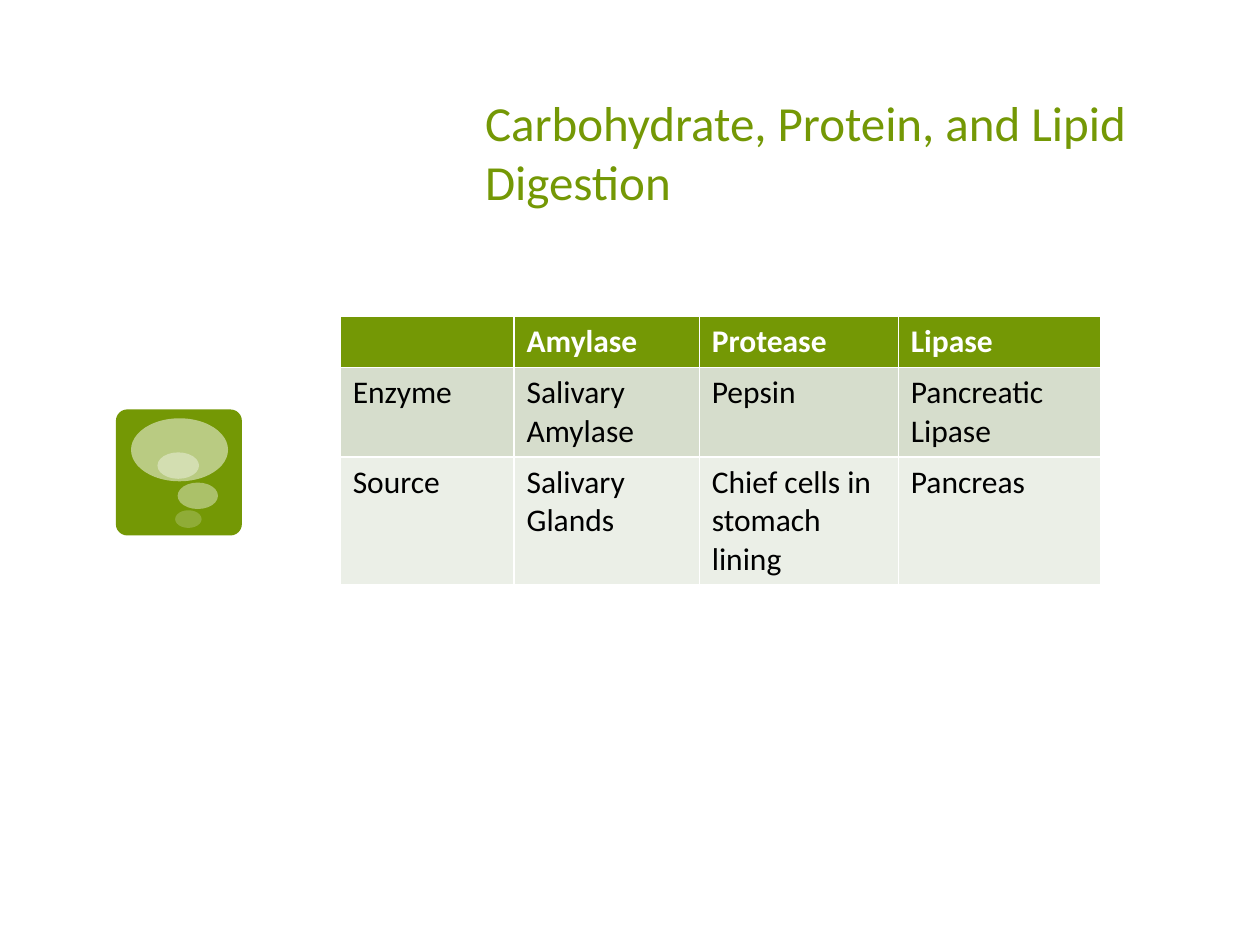
import pptx
import pptx.dml.color
import pptx.enum.shapes
import pptx.enum.text
import pptx.oxml.ns
import pptx.util
from lxml import etree

Inches = pptx.util.Inches
RGBColor = pptx.dml.color.RGBColor
MSO_SHAPE = pptx.enum.shapes.MSO_SHAPE

GREEN = RGBColor(0x74, 0x98, 0x05)
SAGE = RGBColor(0xD6, 0xDD, 0xCC)
PALE_SAGE = RGBColor(0xEB, 0xEF, 0xE7)
WHITE = RGBColor(0xFF, 0xFF, 0xFF)
BLACK = RGBColor(0, 0, 0)

BUBBLES = [
    ((1.04, 3.32, 0.77, 0.5), 50),
    ((1.41, 3.83, 0.32, 0.21), 40),
    ((1.39, 4.05, 0.21, 0.14), 20),
    ((1.25, 3.59, 0.33, 0.21), 38),
]
ENZYMES = [
    ["", "Amylase", "Protease", "Lipase"],
    ["Enzyme", "Salivary Amylase", "Pepsin", "Pancreatic Lipase"],
    ["Source", "Salivary Glands", "Chief cells in stomach lining", "Pancreas"],
]
COLUMN_WIDTHS = [1.38, 1.47, 1.58, 1.61]
ROW_HEIGHTS = [0.3, 0.41, 0.41]
ROW_STYLES = [(GREEN, WHITE, True), (SAGE, BLACK, False), (PALE_SAGE, BLACK, False)]


class EnzymeSlide:
    """Holds the slide and its text style, and adds each kind of element."""

    def __init__(self, slide):
        self.slide = slide
        self.font_name = "Calibri"

    def format_text(self, frame, size, color, bold=False):
        values = {"name": self.font_name, "size": pptx.util.Pt(size), "bold": bold}
        for paragraph in frame.paragraphs:
            for attribute, value in values.items():
                setattr(paragraph.font, attribute, value)
            paragraph.font.color.rgb = color

    def title(self, text, box):
        heading = self.slide.shapes.title
        for attribute, value in zip(("left", "top", "width", "height"), box):
            setattr(heading, attribute, Inches(value))
        frame = heading.text_frame
        frame.text = text
        frame_format = {
            "vertical_anchor": pptx.enum.text.MSO_ANCHOR.BOTTOM,
            "auto_size": pptx.enum.text.MSO_AUTO_SIZE.NONE,
            "word_wrap": True,
        }
        for attribute, value in frame_format.items():
            setattr(frame, attribute, value)
        frame.paragraphs[0].alignment = pptx.enum.text.PP_ALIGN.LEFT
        self.format_text(frame, 28, GREEN)

    def shape(self, group, preset, box, color, opacity=100):
        part = group.shapes.add_shape(preset, *map(Inches, box))
        part.shadow.inherit = False
        part.fill.solid()
        part.fill.fore_color.rgb = color
        part.line.fill.background()
        if opacity < 100:
            tint = part.fill._xPr.find(".//" + pptx.oxml.ns.qn("a:srgbClr"))
            alpha = etree.SubElement(tint, pptx.oxml.ns.qn("a:alpha"))
            alpha.set("val", str(opacity * 1000))
        return part

    def badge(self, box, corner, bubbles):
        group = self.slide.shapes.add_group_shape()
        tile = self.shape(group, MSO_SHAPE.ROUNDED_RECTANGLE, box, GREEN)
        tile.adjustments[0] = corner
        for bubble_box, opacity in bubbles:
            self.shape(group, MSO_SHAPE.OVAL, bubble_box, WHITE, opacity)

    def table(self, rows, left, top):
        box = (left, top, sum(COLUMN_WIDTHS), sum(ROW_HEIGHTS))
        grid = self.slide.shapes.add_table(
            len(rows), len(COLUMN_WIDTHS), *map(Inches, box)
        ).table
        for column, width in zip(grid.columns, COLUMN_WIDTHS):
            column.width = Inches(width)
        for row, height, texts, style in zip(grid.rows, ROW_HEIGHTS, rows, ROW_STYLES):
            row.height = Inches(height)
            fill, color, bold = style
            for cell, text in zip(row.cells, texts):
                cell.text = text
                cell.fill.solid()
                cell.fill.fore_color.rgb = fill
                self.format_text(cell.text_frame, 18, color, bold)


def main():
    deck = pptx.Presentation()
    deck.slide_width, deck.slide_height = Inches(10), Inches(7.5)
    digestion = EnzymeSlide(deck.slides.add_slide(deck.slide_layouts[5]))
    digestion.badge((0.92, 3.25, 1, 1), 0.09, BUBBLES)
    digestion.title(
        "Carbohydrate, Protein, and Lipid Digestion", (3.75, 0.75, 5.41, 0.97)
    )
    digestion.table(ENZYMES, 2.7, 2.51)
    deck.save("out.pptx")


if __name__ == "__main__":
    main()
